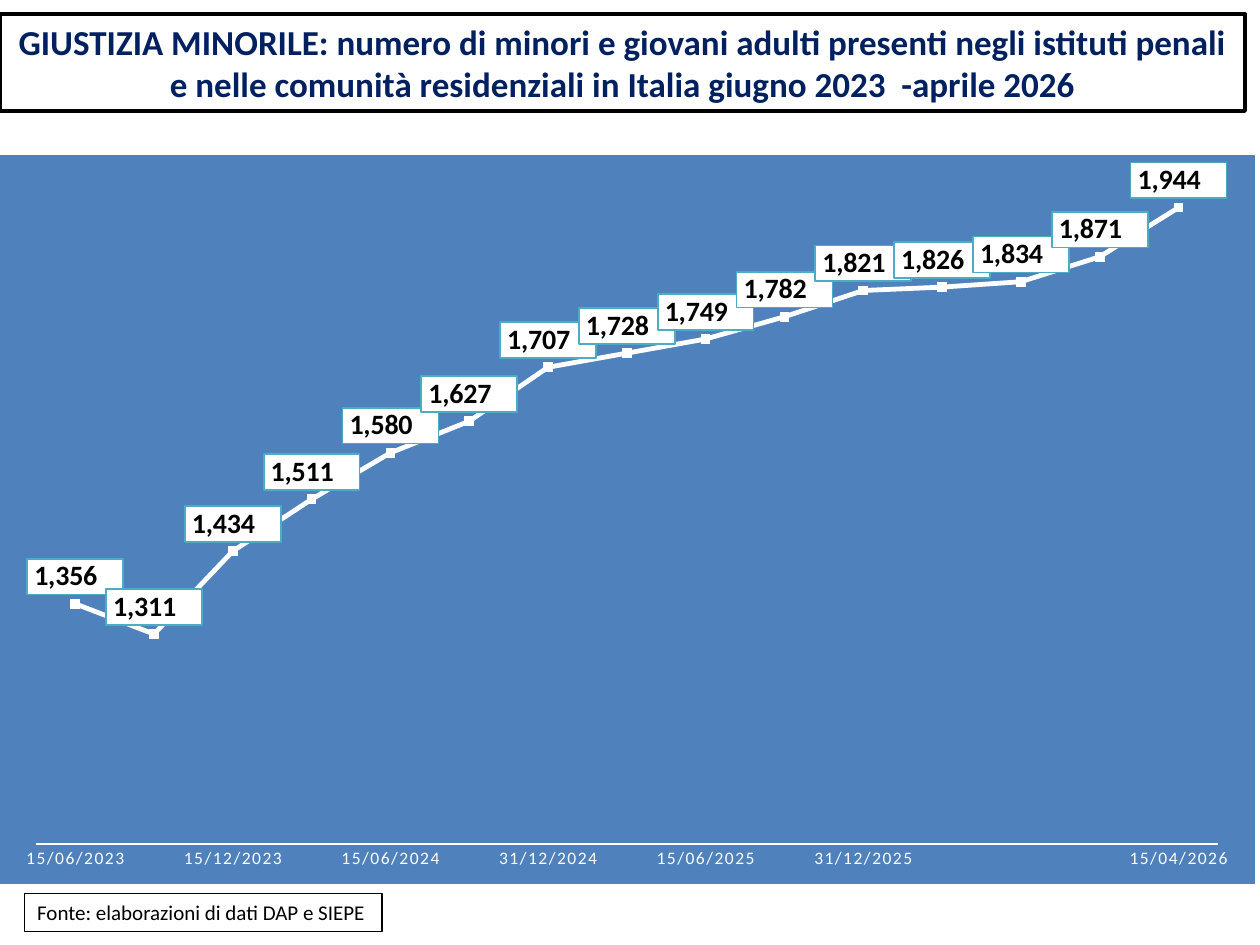
from lxml.etree import fromstring
from pptx import Presentation
from pptx.chart.data import CategoryChartData as Data
from pptx.dml.color import RGBColor
from pptx.enum.chart import XL_CHART_TYPE as Kind, XL_LABEL_POSITION as Pos
from pptx.enum.chart import XL_TICK_MARK as Tick
from pptx.enum.shapes import MSO_SHAPE as Form
from pptx.enum.text import MSO_ANCHOR as Anchor, MSO_AUTO_SIZE as Fit, PP_ALIGN as Align
from pptx.oxml.ns import qn
from pptx.util import Cm, Pt

TITLE = ("GIUSTIZIA MINORILE: numero di minori e giovani adulti presenti "
         "negli istituti penali e nelle comunità residenziali in Italia "
         "giugno 2023  -aprile 2026")
SOURCE = "Fonte: elaborazioni di dati DAP e SIEPE"
DATES = ["15/06/2023", "", "15/12/2023", "", "15/06/2024", "", "31/12/2024", "",
         "15/06/2025", "", "31/12/2025", "", "", "", "15/04/2026"]
COUNTS = [1356, 1311, 1434, 1511, 1580, 1627, 1707, 1728, 1749, 1782,
          1821, 1826, 1834, 1871, 1944]
FORMAT = r'_-* #,##0\ _€_-;\-* #,##0\ _€_-;_-* "-"?'
FACE = "Calibri"
WHITE, BLACK, NAVY, BLUE, TEAL = "FFFFFF", "000000", "002060", "4F81BD", "4BACC6"
PLOT = {"x": 0.028, "y": 0.02, "w": 0.943, "h": 0.925}
NS = ('xmlns:c="http://schemas.openxmlformats.org/drawingml/2006/chart" '
      'xmlns:a="http://schemas.openxmlformats.org/drawingml/2006/main"')


def rgb(code):
    return RGBColor.from_string(code)


def style(font, size, color, bold=False):
    font.name, font.size, font.bold = FACE, Pt(size), bold
    font.color.rgb = rgb(color)


def stroke(line, color, width):
    line.color.rgb = rgb(color)
    line.width = Pt(width)


def fill_box(box, place, text, size, color, width, align, bold=False, wrap=True):
    box.left, box.top, box.width, box.height = map(Cm, place)
    box.fill.solid()
    box.fill.fore_color.rgb = rgb(WHITE)
    stroke(box.line, BLACK, width)
    frame = box.text_frame
    frame.auto_size, frame.word_wrap = Fit.NONE, wrap
    frame.vertical_anchor = Anchor.MIDDLE
    para = frame.paragraphs[0]
    para.alignment = align
    run = para.add_run()
    run.text = text
    style(run.font, size, color, bold)


def back(parent, fill, line, width):
    """Put a fill and border on a chart part, just before its text settings."""
    part = fromstring(
        f'<c:spPr {NS}><a:solidFill><a:srgbClr val="{fill}"/></a:solidFill>'
        f'<a:ln w="{Pt(width)}"><a:solidFill><a:srgbClr val="{line}"/>'
        '</a:solidFill></a:ln></c:spPr>')
    parent.find(qn("c:txPr")).addprevious(part)


def set_plot(chart):
    """Fix the inner plot area as shares of the chart."""
    area = chart._chartSpace.find(".//" + qn("c:plotArea"))
    for old in area.findall(qn("c:layout")):
        area.remove(old)
    sizes = "".join(f'<c:{key} val="{val}"/>' for key, val in PLOT.items())
    area.insert(0, fromstring(
        f'<c:layout {NS}><c:manualLayout><c:layoutTarget val="inner"/>'
        f'<c:xMode val="edge"/><c:yMode val="edge"/>{sizes}'
        '</c:manualLayout></c:layout>'))


def add_trend(slide):
    data = Data(number_format=FORMAT)
    data.categories = DATES
    data.add_series("Series 1", COUNTS)
    place = map(Cm, (0, 3.12, 25.3, 14.71))
    chart = slide.shapes.add_chart(Kind.LINE_STACKED, *place, data).chart
    chart.has_legend = chart.has_title = False
    style(chart.font, 10, BLACK)
    back(chart._chartSpace, BLUE, BLUE, 0.75)
    set_plot(chart)

    values = chart.value_axis
    values.minimum_scale, values.maximum_scale = 1000, 2000
    values.has_major_gridlines = False
    values.visible = False

    dates = chart.category_axis
    dates.major_tick_mark = dates.minor_tick_mark = Tick.NONE
    stroke(dates.format.line, WHITE, 1)
    style(dates.tick_labels.font, 10, WHITE)
    dates._element.find(".//" + qn("a:defRPr")).set("spc", "100")

    chart.plots[0].vary_by_categories = False
    series = chart.plots[0].series[0]
    series.smooth = False
    series.marker.style = None
    stroke(series.format.line, WHITE, 2.75)
    labels = series.data_labels
    labels.show_value, labels.position = True, Pos.ABOVE
    labels.number_format, labels.number_format_is_linked = FORMAT, False
    style(labels.font, 16, BLACK, True)
    back(labels._element, WHITE, TEAL, 1)


def main():
    deck = Presentation()
    deck.slide_width, deck.slide_height = Cm(25.4), Cm(19.05)
    slide = deck.slides.add_slide(deck.slide_layouts[5])
    fill_box(slide.shapes.title, (0, 0.28, 25.1, 1.96), TITLE, 20, NAVY, 2,
             Align.CENTER, bold=True)
    note = slide.shapes.add_shape(Form.RECTANGLE, 0, 0, 0, 0)
    note.shadow.inherit = False
    fill_box(note, (0.5, 18.01, 7.2, 0.77), SOURCE, 12, BLACK, 0.75,
             Align.LEFT, wrap=False)
    add_trend(slide)
    deck.save("out.pptx")


if __name__ == "__main__":
    main()
